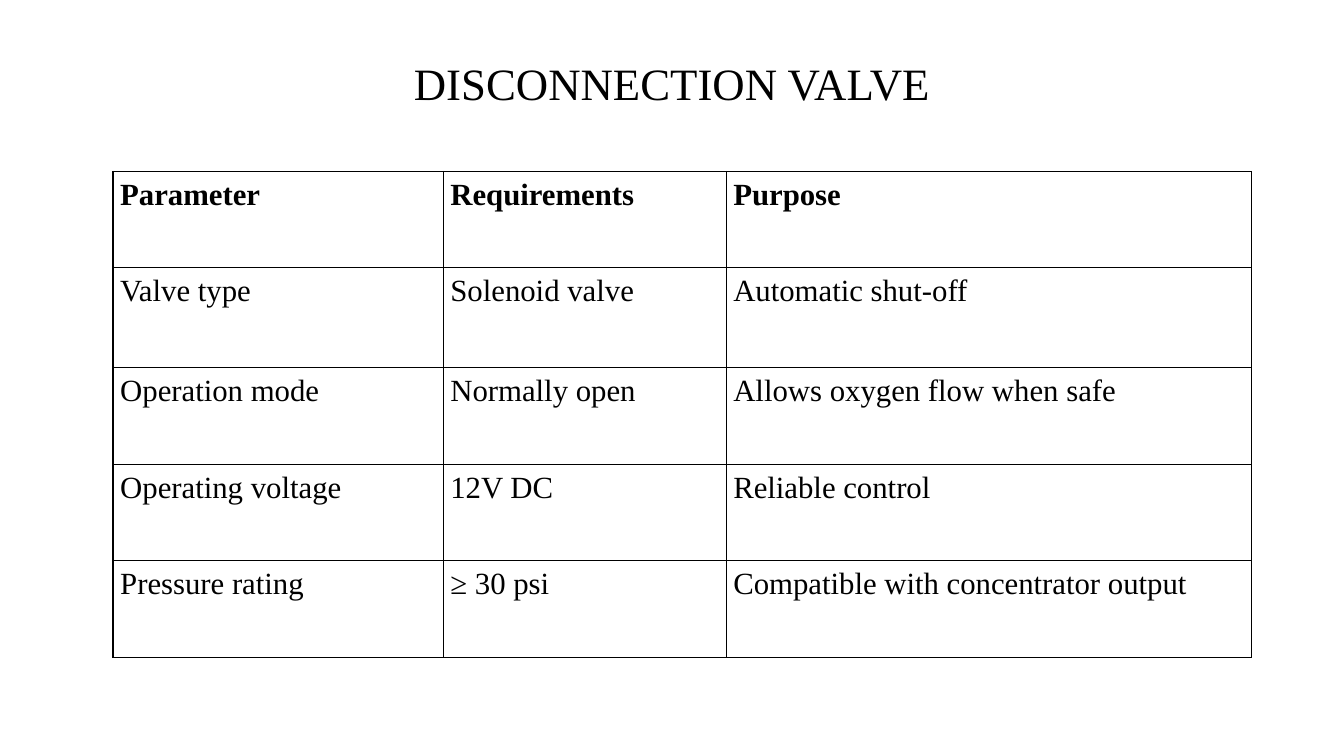
from dataclasses import dataclass

from pptx import Presentation
from pptx import util as u
from pptx.dml import color
from pptx.enum import text
from pptx.oxml import xmlchemy


@dataclass(frozen=True)
class Theme:
    font: str = "Times New Roman"
    ink: str = "000000"
    title_size: int = 32
    table_size: int = 22
    border: int = 1


def apply(target, values):
    for name, value in values.items():
        setattr(target, name, value)


class SlideBuilder:
    """Places styled elements on the current slide."""

    def __init__(self, page, theme):
        self.page = page
        self.theme = theme

    def add_words(self, frame, words, size, bold=False, **paragraph_format):
        para = frame.paragraphs[0]
        apply(para, paragraph_format)
        span = para.add_run()
        span.text = words
        apply(span.font, {"name": self.theme.font, "size": u.Pt(size), "bold": bold})
        span.font.color.rgb = color.RGBColor.from_string(self.theme.ink)

    def title(self, words, left, top, width, height):
        box = self.page.shapes.title
        apply(box, {"left": u.Cm(left), "top": u.Cm(top),
                    "width": u.Cm(width), "height": u.Cm(height)})
        apply(box.text_frame, {"word_wrap": True,
                               "vertical_anchor": text.MSO_ANCHOR.MIDDLE})
        self.add_words(box.text_frame, words, self.theme.title_size,
                       alignment=text.PP_ALIGN.CENTER, line_spacing=0.9)

    def border(self, cell):
        properties = cell._tc.get_or_add_tcPr()
        for index, side in enumerate(("a:lnL", "a:lnR", "a:lnT", "a:lnB")):
            line = xmlchemy.OxmlElement(side)
            line.set("w", str(u.Pt(self.theme.border)))
            fill = xmlchemy.OxmlElement("a:solidFill")
            ink = xmlchemy.OxmlElement("a:srgbClr")
            ink.set("val", self.theme.ink)
            fill.append(ink)
            line.append(fill)
            properties.insert(index, line)

    def table(self, rows, left, top, widths, heights):
        table = self.page.shapes.add_table(
            len(rows), len(widths), u.Cm(left), u.Cm(top),
            u.Cm(sum(widths)), u.Cm(sum(heights))).table
        apply(table, {"first_row": False, "horz_banding": False})
        for column, width in zip(table.columns, widths):
            column.width = u.Cm(width)
        for row, height in zip(table.rows, heights):
            row.height = u.Cm(height)
        margins = {"margin_left": u.Cm(0.18), "margin_top": u.Cm(0.1),
                   "margin_right": u.Cm(0.2), "margin_bottom": u.Cm(0)}
        for row_index, row in enumerate(rows):
            for column_index, words in enumerate(row):
                cell = table.cell(row_index, column_index)
                apply(cell, margins)
                cell.fill.background()
                self.border(cell)
                self.add_words(cell.text_frame, words, self.theme.table_size,
                               bold=row_index == 0, line_spacing=1.07,
                               space_after=u.Pt(10.8))


ROWS = [
    ("Parameter", "Requirements", "Purpose"),
    ("Valve type", "Solenoid valve", "Automatic shut-off"),
    ("Operation mode", "Normally open", "Allows oxygen flow when safe"),
    ("Operating voltage", "12V DC", "Reliable control"),
    ("Pressure rating", "≥ 30 psi", "Compatible with concentrator output"),
]


def main():
    deck = Presentation()
    apply(deck, {"slide_width": u.Cm(33.87), "slide_height": u.Cm(19.05)})
    page = deck.slides.add_slide(deck.slide_layouts.get_by_name("Title Only"))
    builder = SlideBuilder(page, Theme())
    builder.title("DISCONNECTION VALVE", 2.33, 1.01, 29.21, 2.32)
    builder.table(ROWS, 2.85, 4.32, (8.32, 7.13, 13.23),
                  (2.43, 2.52, 2.43, 2.43, 2.43))
    deck.save("out.pptx")


if __name__ == "__main__":
    main()
